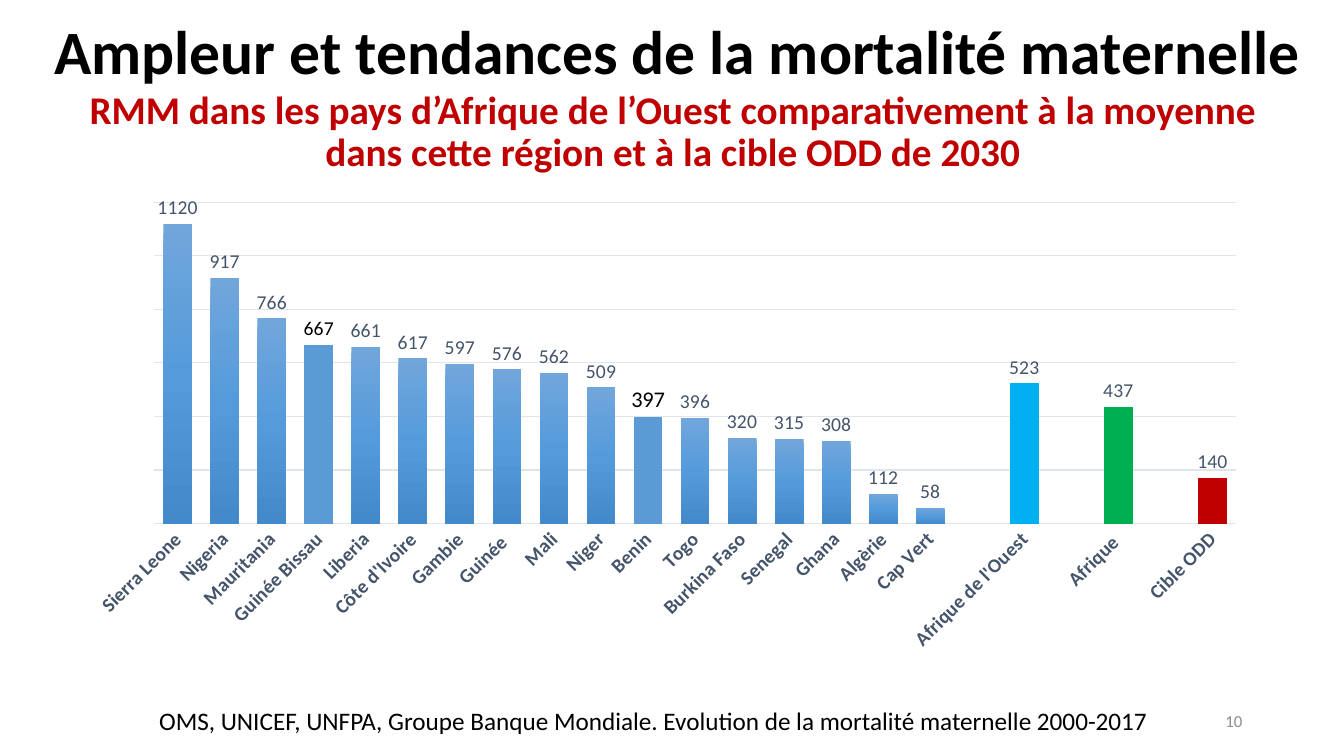
from copy import deepcopy

from lxml import etree
from pptx import Presentation
from pptx import util as u
from pptx.chart import data as chart_data
from pptx.dml import color
from pptx.enum import chart as ch
from pptx.enum import text
from pptx.oxml import parse_xml
from pptx.oxml import ns

COLOURS = {
    "black": "000000", "red": "C00000", "slate": "44546A", "grey": "8C8C8C",
    "grid": "E0E5EB", "flat": "5B9BD5", "sky": "00B0F0", "green": "00B050",
    "top": "71A6DB", "middle": "559BDB", "bottom": "448ACA",
}

RATIOS = [
    ("Sierra Leone", 1120), ("Nigeria", 917), ("Mauritania", 766),
    ("Guinée Bissau", 667), ("Liberia", 661), ("Côte d'Ivoire", 617),
    ("Gambie", 597), ("Guinée ", 576), ("Mali", 562), ("Niger", 509),
    ("Benin", 397), ("Togo", 396), ("Burkina Faso", 320), ("Senegal", 315),
    ("Ghana", 308), ("Algèrie", 112), ("Cap Vert", 58), ("", None),
    ("Afrique de l'Ouest", 523), ("", None), ("Afrique ", 437),
    ("", None), ("Cible ODD", 170),
]
POINT_FILLS = {3: "flat", 10: "flat", 18: "sky", 20: "green", 22: "red"}
POINT_LABELS = {3: ("667", 14, "black"), 10: ("397", 16, "black"), 22: ("140", 14, "slate")}
PLOT_AREA = {"x": 0.053, "y": 0.018, "w": 0.933, "h": 0.67}


class SlideBuilder:
    font_name = "Calibri"

    def __init__(self, page):
        self.page = page

    def rgb(self, name):
        return color.RGBColor.from_string(COLOURS[name])

    def style(self, font, size, colour, bold=False):
        font.name = self.font_name
        font.size = u.Pt(size)
        font.bold = bold
        font.color.rgb = self.rgb(colour)

    def text(self, place, words, size, colour, bold=False, align=text.PP_ALIGN.LEFT,
             anchor=text.MSO_ANCHOR.MIDDLE, spacing=1.0):
        box = self.page.shapes.add_textbox(*map(u.Inches, place))
        frame = box.text_frame
        frame.word_wrap = True
        frame.vertical_anchor = anchor
        para = frame.paragraphs[0]
        para.text = words
        para.alignment = align
        para.line_spacing = spacing
        self.style(para.font, size, colour, bold)
        return frame

    def line(self, line_format):
        line_format.color.rgb = self.rgb("grid")
        line_format.width = u.Pt(0.75)

    def gradient(self, series, names):
        fill = series.format.fill
        fill.gradient()
        fill.gradient_angle = 270
        stop_list = series._element.xpath("./c:spPr/a:gradFill/a:gsLst")[0]
        stop_list.insert(1, deepcopy(stop_list[0]))
        for index, (stop, name) in enumerate(zip(fill.gradient_stops, names)):
            stop.color.rgb = self.rgb(name)
            stop.position = index / (len(names) - 1)

    def place_plot(self, chart):
        plot_area = chart._chartSpace.chart.plotArea
        for old in plot_area.findall(ns.qn("c:layout")):
            plot_area.remove(old)
        layout = parse_xml(f'<c:layout {ns.nsdecls("c")}><c:manualLayout/></c:layout>')
        settings = {"layoutTarget": "inner", "xMode": "edge", "yMode": "edge", **PLOT_AREA}
        for tag, value in settings.items():
            etree.SubElement(layout[0], ns.qn(f"c:{tag}")).set("val", str(value))
        plot_area.insert(0, layout)

    def columns(self, place, ratios):
        table = chart_data.CategoryChartData()
        table.categories = [country for country, _ in ratios]
        table.add_series("Series 1", [ratio for _, ratio in ratios])
        chart = self.page.shapes.add_chart(
            ch.XL_CHART_TYPE.COLUMN_CLUSTERED, *map(u.Inches, place), table).chart
        chart.has_legend = False
        chart.has_title = False
        self.style(chart.font, 14, "black")
        self.place_plot(chart)
        self.axes(chart)

        plot = chart.plots[0]
        plot.vary_by_categories = False
        plot.gap_width = 63
        plot.overlap = 78
        series = plot.series[0]
        series.invert_if_negative = False
        self.gradient(series, ["top", "middle", "bottom"])
        self.labels(series)
        for index, name in POINT_FILLS.items():
            fill = series.points[index].format.fill
            fill.solid()
            fill.fore_color.rgb = self.rgb(name)

    def axes(self, chart):
        countries = chart.category_axis
        countries.major_tick_mark = ch.XL_TICK_MARK.NONE
        self.line(countries.format.line)
        self.style(countries.tick_labels.font, 14, "slate", True)
        countries._element.xpath("./c:txPr/a:bodyPr")[0].set("rot", "-2700000")
        ratios = chart.value_axis
        ratios.minimum_scale = 0
        ratios.maximum_scale = 1200
        ratios.major_unit = 200
        ratios.visible = False
        self.line(ratios.major_gridlines.format.line)

    def labels(self, series):
        labels = series.data_labels
        labels.show_value = True
        labels.position = ch.XL_LABEL_POSITION.OUTSIDE_END
        self.style(labels.font, 14, "slate")
        for index, (words, size, colour) in POINT_LABELS.items():
            label = series.points[index].data_label
            para = label.text_frame.paragraphs[0]
            para.text = words
            self.style(para.runs[0].font, size, colour)
            label.position = ch.XL_LABEL_POSITION.OUTSIDE_END


def main():
    deck = Presentation()
    deck.slide_width = u.Inches(13.33)
    deck.slide_height = u.Inches(7.5)
    builder = SlideBuilder(deck.slides.add_slide(deck.slide_layouts[6]))

    builder.text((0.44, 0, 12.89, 1.08), "Ampleur et tendances de la mortalité maternelle",
                 44, "black", bold=True, spacing=0.9)
    builder.columns((0.92, 1.92, 11.5, 4.76), RATIOS)
    subtitle = builder.text(
        (0.6, 0.95, 12.14, 1.16),
        "RMM dans les pays d’Afrique de l’Ouest comparativement à la moyenne "
        "dans cette région et à la cible ODD de 2030",
        28, "red", bold=True, align=text.PP_ALIGN.CENTER, spacing=0.9)
    subtitle.margin_top = 0
    subtitle.margin_bottom = u.Inches(0.42)
    builder.text((9.42, 6.95, 3, 0.4), "10", 12, "grey", align=text.PP_ALIGN.RIGHT)
    builder.text(
        (1.48, 6.95, 10.13, 0.4),
        "OMS, UNICEF, UNFPA, Groupe Banque Mondiale. "
        "Evolution de la mortalité maternelle 2000-2017",
        18, "black", anchor=text.MSO_ANCHOR.TOP)
    deck.save("out.pptx")


if __name__ == "__main__":
    main()
